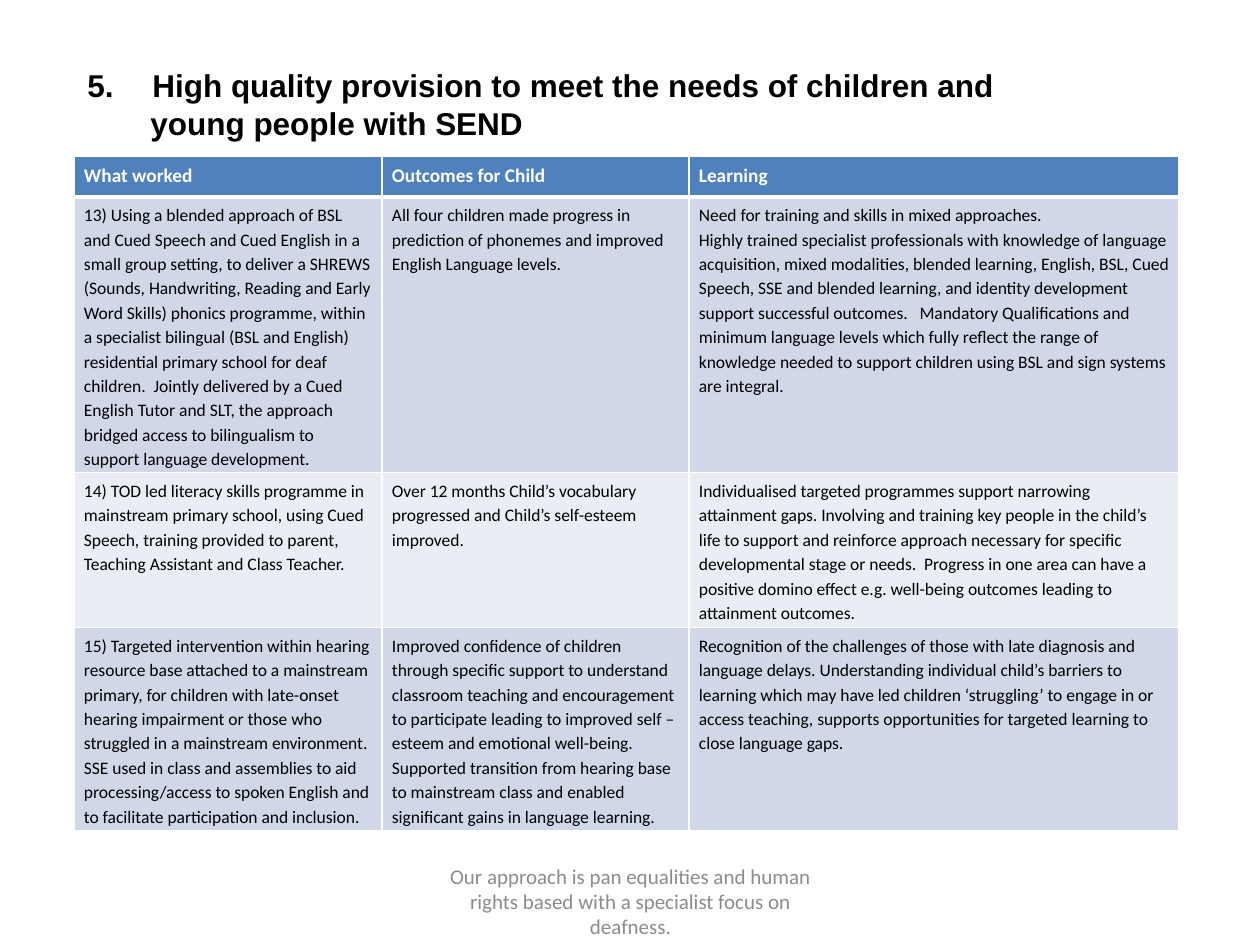
from pptx import Presentation
from pptx.dml.color import RGBColor
from pptx.enum.text import MSO_ANCHOR, PP_ALIGN
from pptx.oxml import parse_xml
from pptx.oxml.ns import nsdecls
from pptx.util import Pt

SCALE = 914400 / 126
COLORS = {"white": "FFFFFF", "black": "000000", "head": "4F81BD",
          "odd": "D0D8E8", "even": "E9EDF4", "foot": "8C8C8C"}
TITLE = ["High quality provision to meet the needs of children and",
         "young people with SEND"]
FOOT = ("Our approach is pan equalities and human rights based "
        "with a specialist focus on deafness.")
COLS = [308, 307, 490]
HEIGHTS = [41, 263, 125, 194]
# Each cell is a list of paragraphs.
ROWS = [
    [["What worked"], ["Outcomes for Child"], ["Learning"]],
    [["13) Using a blended approach of BSL and Cued Speech and Cued English "
      "in a small group setting, to deliver a SHREWS (Sounds, Handwriting, "
      "Reading and Early Word Skills) phonics programme, within a specialist "
      "bilingual (BSL and English) residential primary school for deaf "
      "children.  Jointly delivered by a Cued English Tutor and SLT, the "
      "approach bridged access to bilingualism to support language "
      "development."],
     ["All four children made progress in prediction of phonemes and "
      "improved English Language levels."],
     ["Need for training and skills in mixed approaches.",
      "Highly trained specialist professionals with knowledge of language "
      "acquisition, mixed modalities, blended learning, English, BSL, Cued "
      "Speech, SSE and blended learning, and identity development support "
      "successful outcomes.   Mandatory Qualifications and minimum language "
      "levels which fully reflect the range of knowledge needed to support "
      "children using BSL and sign systems are integral."]],
    [["14) TOD led literacy skills programme in   mainstream primary school, "
      "using Cued Speech, training provided to parent, Teaching Assistant "
      "and Class Teacher."],
     ["Over 12 months Child’s vocabulary progressed and Child’s self-esteem "
      "improved."],
     ["Individualised targeted programmes support narrowing attainment gaps. "
      "Involving and training key people in the child’s life to support and "
      "reinforce approach necessary for specific developmental stage or "
      "needs.  Progress in one area can have a positive domino effect e.g. "
      "well-being outcomes leading to attainment outcomes."]],
    [["15) Targeted intervention within hearing resource base attached to a "
      "mainstream primary, for children with late-onset hearing impairment "
      "or those who struggled in a mainstream environment.  SSE used in "
      "class and assemblies to aid processing/access to spoken English and "
      "to facilitate participation and inclusion."],
     ["Improved confidence of children through specific support to "
      "understand classroom teaching and encouragement to participate "
      "leading to improved self –esteem and emotional well-being.  Supported "
      "transition from hearing base to mainstream class and enabled "
      "significant gains in language learning."],
     ["Recognition of the challenges of those with late diagnosis and "
      "language delays. Understanding individual child’s barriers to "
      "learning which may have led children ‘struggling’ to engage in or "
      "access teaching, supports opportunities for targeted learning to "
      "close language gaps."]],
]


def px(n):
    return round(n * SCALE)


def rgb(name):
    return RGBColor.from_string(COLORS[name])


def write(frame, texts, size, color, font="Calibri", bold=False):
    """Fill a text frame with one run per paragraph."""
    for i, text in enumerate(texts):
        para = frame.add_paragraph() if i else frame.paragraphs[0]
        run = para.add_run()
        run.text = text
        run.font.size = Pt(size)
        run.font.name = font
        run.font.bold = bold
        run.font.color.rgb = rgb(color)
    return frame.paragraphs


def add_box(slide, *place):
    frame = slide.shapes.add_textbox(*map(px, place)).text_frame
    frame.word_wrap = True
    frame.vertical_anchor = MSO_ANCHOR.MIDDLE
    return frame


def add_title(slide):
    frame = add_box(slide, 75, 59, 950, 90)
    first, second = write(frame, TITLE, 18, "black", "Arial", True)
    props = first._p.get_or_add_pPr()
    props.set("marL", str(px(65)))
    props.set("indent", str(-px(65)))
    props.append(parse_xml(f'<a:buFont {nsdecls("a")} typeface="Arial"/>'))
    props.append(parse_xml(
        f'<a:buAutoNum {nsdecls("a")} type="arabicPeriod" startAt="5"/>'))
    second._p.get_or_add_pPr().set("marL", str(px(63)))


def add_foot(slide):
    frame = add_box(slide, 431, 876, 399, 50)
    para, = write(frame, [FOOT], 12, "foot")
    para.alignment = PP_ALIGN.CENTER


def set_edges(cell, row):
    """Draw white edges, thicker below the header row."""
    widths = {"L": 1, "R": 1, "T": 3 if row == 1 else 1,
              "B": 3 if row == 0 else 1}
    props = cell._tc.get_or_add_tcPr()
    for i, (side, width) in enumerate(widths.items()):
        props.insert(i, parse_xml(
            f'<a:ln{side} {nsdecls("a")} w="{Pt(width)}"><a:solidFill>'
            f'<a:srgbClr val="{COLORS["white"]}"/></a:solidFill>'
            f'</a:ln{side}>'))


def fill_cell(cell, row, texts):
    head = row == 0
    cell.margin_left = cell.margin_right = px(10)
    cell.margin_top = cell.margin_bottom = px(5)
    cell.fill.solid()
    cell.fill.fore_color.rgb = rgb("head" if head else
                                   "odd" if row % 2 else "even")
    set_edges(cell, row)
    for para in write(cell.text_frame, texts, 11 if head else 10,
                      "white" if head else "black", bold=head):
        para.line_spacing = 1.15


def add_grid(slide):
    place = map(px, (74, 156, sum(COLS), sum(HEIGHTS)))
    table = slide.shapes.add_table(len(ROWS), len(COLS), *place).table
    for col, width in zip(table.columns, COLS):
        col.width = px(width)
    for r, (height, texts) in enumerate(zip(HEIGHTS, ROWS)):
        table.rows[r].height = px(height)
        for c, text in enumerate(texts):
            fill_cell(table.cell(r, c), r, text)


def main():
    deck = Presentation()
    deck.slide_width, deck.slide_height = px(1260), px(945)
    slide = deck.slides.add_slide(deck.slide_layouts[6])
    add_foot(slide)
    add_grid(slide)
    add_title(slide)
    deck.save("out.pptx")


if __name__ == "__main__":
    main()
